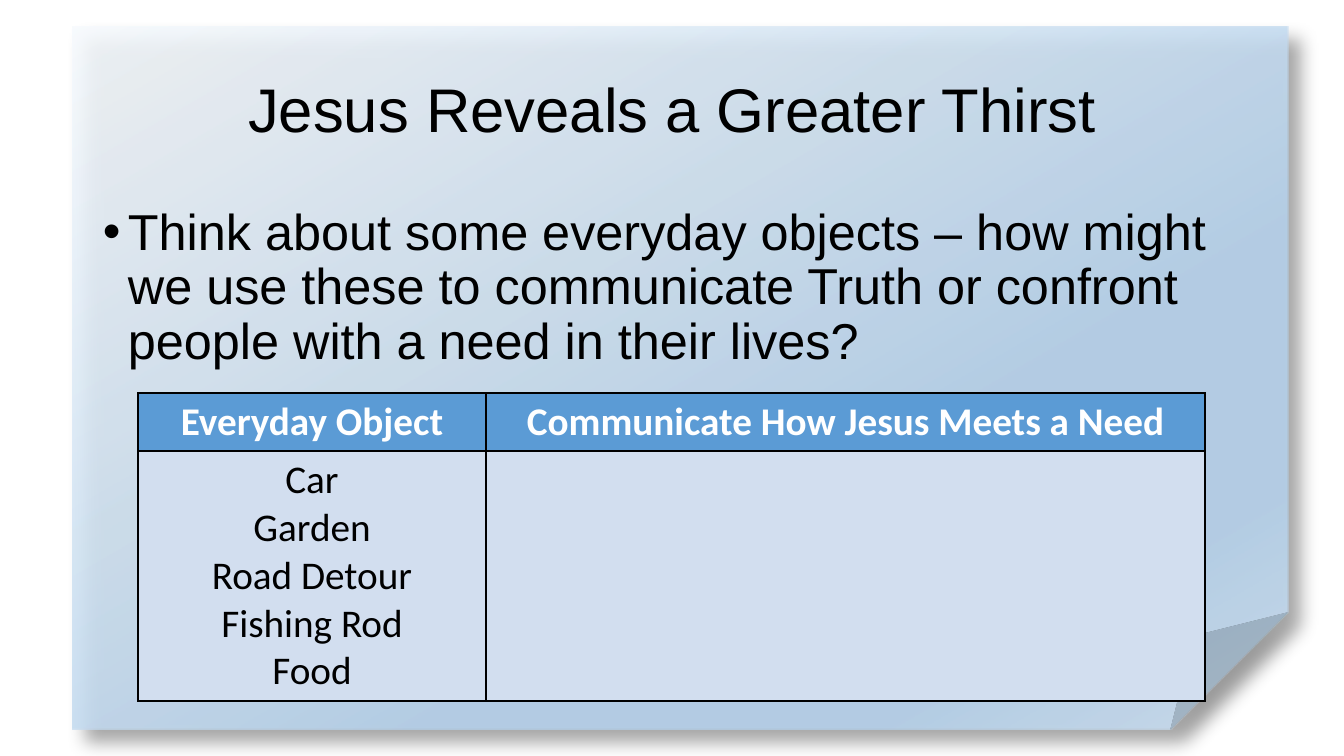
from dataclasses import dataclass

from lxml import etree
from pptx import Presentation
from pptx.dml.color import RGBColor
from pptx.enum.shapes import MSO_SHAPE
from pptx.enum.text import MSO_ANCHOR, MSO_AUTO_SIZE, PP_ALIGN
from pptx.oxml import parse_xml
from pptx.oxml.ns import nsdecls, qn
from pptx.util import Emu, Pt

FOLD = MSO_SHAPE.FOLDED_CORNER
LEFT, CENTER = PP_ALIGN.LEFT, PP_ALIGN.CENTER
TOP, MIDDLE = MSO_ANCHOR.TOP, MSO_ANCHOR.MIDDLE
NO_FIT = MSO_AUTO_SIZE.NONE
TITLE_ONLY = 5
SCALE = 914400 / 100.8


@dataclass(frozen=True)
class Theme:
    ink: str = "000000"
    white: str = "FFFFFF"
    head: str = "5B9BD5"
    cell: str = "D2DEEF"
    page: tuple = ((0, "F7FAFD"), (64, "B5D2EC"), (83, "B5D2EC"), (100, "CEE1F2"))
    font: str = "Arial"
    grid_font: str = "Calibri"
    title: int = 44
    body: int = 36
    grid: int = 28


@dataclass(frozen=True)
class Box:
    x: int
    y: int
    w: int
    h: int

    def emu(self) -> list[Emu]:
        return [px(n) for n in (self.x, self.y, self.w, self.h)]


@dataclass(frozen=True)
class Row:
    high: int
    cells: tuple[str, ...]
    fill: str
    ink: str
    bold: bool


THEME = Theme()
PAGE = Box(73, 27, 1215, 703)
TITLE = Box(93, 40, 1159, 146)
BODY = Box(93, 202, 1159, 480)
GRID = Box(138, 393, 1067, 308)
COLS = (348, 719)
ROWS = (
    Row(58, ("Everyday Object", "Communicate How Jesus Meets a Need"),
        THEME.head, THEME.white, True),
    Row(250, ("Car\nGarden\nRoad Detour\nFishing Rod\nFood", ""),
        THEME.cell, THEME.ink, False),
)


def px(n: int) -> Emu:
    return Emu(round(n * SCALE))


def write(frame, text: str, *, size: int, font: str = THEME.font, ink: str = THEME.ink,
          bold: bool = False, align=LEFT, line: float = 1.0, bullet: bool = False) -> None:
    """Fill a text frame, one paragraph for each line of text."""
    frame.word_wrap = True
    for i, words in enumerate(text.split("\n")):
        para = frame.paragraphs[0] if i == 0 else frame.add_paragraph()
        if bullet:
            props = para._p.get_or_add_pPr()
            indent = px(25)
            props.set("marL", str(indent))
            props.set("indent", str(-indent))
            etree.SubElement(props, qn("a:buFont"), typeface="Arial")
            etree.SubElement(props, qn("a:buChar"), char="•")
        para.alignment = align
        para.line_spacing = line
        para.space_before = Pt(0)
        run = para.add_run()
        run.text = words
        run.font.name = font
        run.font.size = Pt(size)
        run.font.bold = bold
        run.font.color.rgb = RGBColor.from_string(ink)


def add_page(slide) -> None:
    """Draw the folded sheet with its gradient and shadow."""
    sheet = slide.shapes.add_shape(FOLD, *PAGE.emu())
    sheet.line.fill.background()
    stops = "".join(
        f'<a:gs pos="{pos * 1000}"><a:srgbClr val="{tint}">'
        '<a:alpha val="87000"/></a:srgbClr></a:gs>' for pos, tint in THEME.page)
    fill = parse_xml(
        f'<a:gradFill {nsdecls("a")} rotWithShape="1"><a:gsLst>{stops}</a:gsLst>'
        f'<a:lin ang="{60 * 60000}" scaled="0"/></a:gradFill>')
    shade = parse_xml(
        f'<a:effectLst {nsdecls("a")}><a:outerShdw blurRad="{Pt(13)}" dist="{Pt(13)}" '
        f'dir="{45 * 60000}" algn="tl" rotWithShape="0"><a:srgbClr val="{THEME.ink}">'
        '<a:alpha val="40000"/></a:srgbClr></a:outerShdw></a:effectLst>')
    props = sheet._element.spPr
    props.find(qn("a:prstGeom")).addnext(fill)
    props.append(shade)


def add_title(slide) -> None:
    title = slide.shapes.title
    title.left, title.top, title.width, title.height = TITLE.emu()
    frame = title.text_frame
    frame.auto_size = NO_FIT
    frame.vertical_anchor = MIDDLE
    write(frame, "Jesus Reveals a Greater Thirst", size=THEME.title, align=CENTER, line=0.9)


def add_body(slide) -> None:
    frame = slide.shapes.add_textbox(*BODY.emu()).text_frame
    frame.auto_size = NO_FIT
    frame.vertical_anchor = TOP
    write(frame, "Think about some everyday objects – how might we use these to "
          "communicate Truth or confront people with a need in their lives?",
          size=THEME.body, line=0.9, bullet=True)


def edge(cell) -> None:
    """Rule all four sides of a cell."""
    props = cell._tc.get_or_add_tcPr()
    for side in "LRTB":
        props.append(parse_xml(
            f'<a:ln{side} {nsdecls("a")} w="{Pt(1)}"><a:solidFill>'
            f'<a:srgbClr val="{THEME.ink}"/></a:solidFill></a:ln{side}>'))


def add_grid(slide) -> None:
    grid = slide.shapes.add_table(len(ROWS), len(COLS), *GRID.emu()).table
    for col, wide in zip(grid.columns, COLS):
        col.width = px(wide)
    for line, row in zip(grid.rows, ROWS):
        line.height = px(row.high)
        for cell, text in zip(line.cells, row.cells):
            edge(cell)
            cell.fill.solid()
            cell.fill.fore_color.rgb = RGBColor.from_string(row.fill)
            if text:
                write(cell.text_frame, text, size=THEME.grid, font=THEME.grid_font,
                      ink=row.ink, bold=row.bold, align=CENTER)


def main() -> None:
    deck = Presentation()
    deck.slide_width, deck.slide_height = px(1344), px(756)
    slide = deck.slides.add_slide(deck.slide_layouts[TITLE_ONLY])
    back = slide.background.fill
    back.solid()
    back.fore_color.rgb = RGBColor.from_string(THEME.white)
    add_page(slide)
    tree = slide.shapes._spTree
    tree.append(slide.shapes.title._element)
    add_title(slide)
    add_body(slide)
    add_grid(slide)
    deck.save("out.pptx")


if __name__ == "__main__":
    main()
